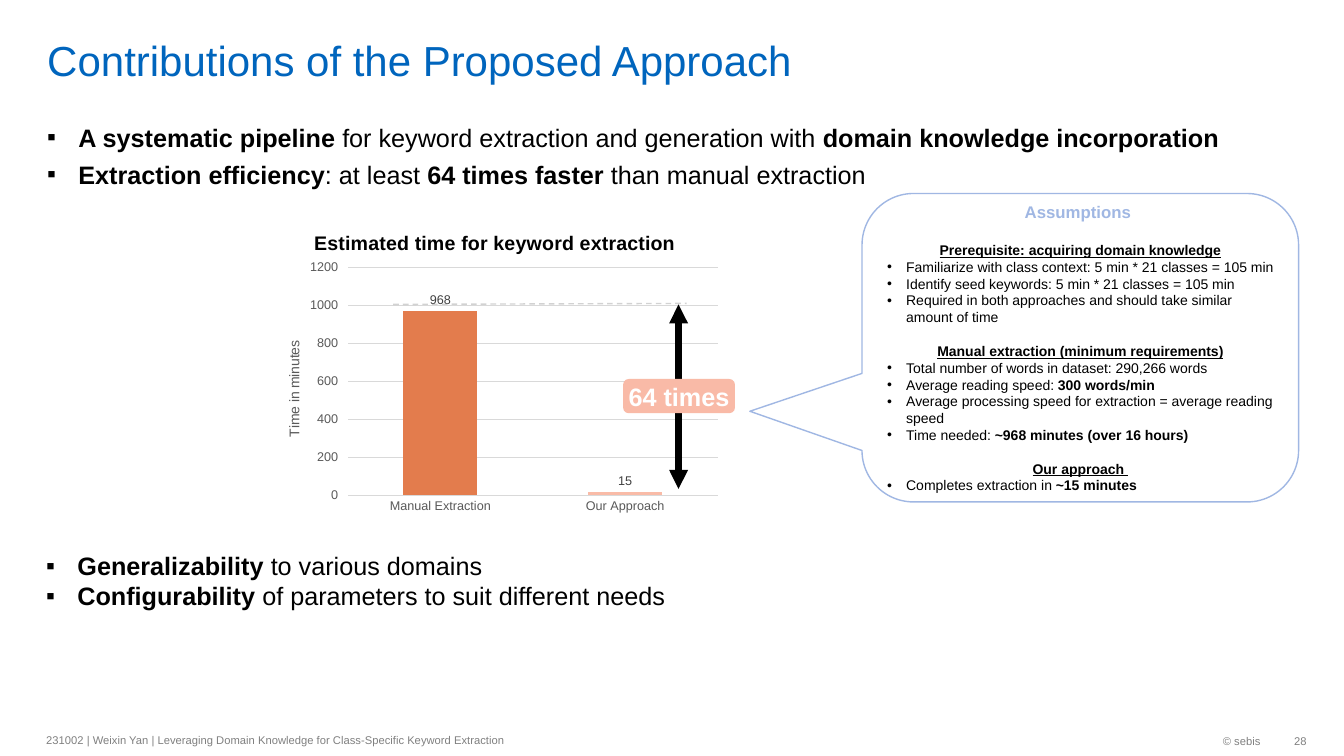
from lxml.etree import SubElement
from pptx import Presentation
from pptx.chart.data import CategoryChartData
from pptx.dml.color import RGBColor
from pptx.enum.chart import XL_CHART_TYPE as ChartKind, XL_LABEL_POSITION as LabelSpot, XL_TICK_MARK as Tick
from pptx.enum.dml import MSO_LINE as Dash
from pptx.enum.shapes import MSO_CONNECTOR as Connector, MSO_SHAPE as Preset
from pptx.enum.text import MSO_ANCHOR as Anchor, PP_ALIGN as Align
from pptx.oxml import parse_xml
from pptx.oxml.ns import nsdecls, qn
from pptx.util import Pt

EMU_PER_PX = 9144


def px(length):
    return length * EMU_PER_PX


def color(value):
    return RGBColor.from_string(value)


class SlideBuilder:
    face = "Arial"
    black = "000000"
    gray = "808080"
    axis_gray = "595959"
    grid_gray = "D9D9D9"
    periwinkle = "A0B7E3"

    def __init__(self, deck):
        self.page = deck.slides.add_slide(deck.slide_layouts[6])

    def style(self, font, size, hue, bold=None):
        font.name, font.size, font.bold = self.face, Pt(size), bold
        font.color.rgb = color(hue)

    def paragraph(self, frame, text, size, hue=black, align=Align.LEFT, bullet=None,
                  indent=0, before=0, underline=None):
        first = not frame.paragraphs[0].runs
        para = frame.paragraphs[0] if first else frame.add_paragraph()
        para.alignment = align
        if not first:
            para.space_before = Pt(before)
        if bullet:
            props = para._p.get_or_add_pPr()
            props.set("marL", str(px(indent)))
            props.set("indent", str(-px(indent)))
            SubElement(props, qn("a:buFont")).set("typeface", self.face)
            SubElement(props, qn("a:buChar")).set("char", bullet)
        self.style(para.font, size, hue)
        para.font.underline = underline
        for index, part in enumerate(text.split("**")):
            if part:
                span = para.add_run()
                span.text = part
                span.font.bold = index % 2 == 1

    def frame(self, shape, anchor, insets):
        frame = shape.text_frame
        frame.word_wrap = True
        frame.vertical_anchor = anchor
        (frame.margin_left, frame.margin_top,
         frame.margin_right, frame.margin_bottom) = map(px, insets)
        return frame

    def text(self, area, lines, size, hue=black, anchor=Anchor.TOP, insets=(10, 5, 10, 5), **layout):
        box = self.page.shapes.add_textbox(*map(px, area))
        frame = self.frame(box, anchor, insets)
        for line in lines:
            self.paragraph(frame, line, size, hue, **layout)

    def shape(self, preset, area, fill=None, line=None, adjustments=(), insets=(10, 5, 10, 5)):
        shape = self.page.shapes.add_shape(preset, *map(px, area))
        shape.shadow.inherit = False
        for index, value in enumerate(adjustments):
            shape.adjustments[index] = value
        if fill:
            shape.fill.solid()
            shape.fill.fore_color.rgb = color(fill)
        else:
            shape.fill.background()
        if line:
            shape.line.color.rgb = color(line)
            shape.line.width = Pt(1)
        else:
            shape.line.fill.background()
        return self.frame(shape, Anchor.MIDDLE, insets)

    def connector(self, start, end, hue, width, arrows=False, dash=None, opacity=None):
        link = self.page.shapes.add_connector(Connector.STRAIGHT, *map(px, start + end))
        link.line.color.rgb = color(hue)
        link.line.width = Pt(width)
        if dash:
            link.line.dash_style = dash
        outline = link.line._get_or_add_ln()
        if opacity:
            SubElement(outline.find(".//" + qn("a:srgbClr")), qn("a:alpha")).set("val", str(opacity * 1000))
        if arrows:
            for end_tag in ("a:headEnd", "a:tailEnd"):
                SubElement(outline, qn(end_tag)).set("type", "triangle")
        SubElement(link._element.spPr, qn("a:effectLst"))

    def place(self, element, index, **fractions):
        for old in element.findall(qn("c:layout")):
            element.remove(old)
        inner = '<c:layoutTarget val="inner"/>' if "w" in fractions else ""
        modes = "".join(f'<c:{key}Mode val="edge"/>' for key in ("x", "y"))
        values = "".join(f'<c:{key} val="{value}"/>' for key, value in fractions.items())
        element.insert(index, parse_xml(
            f'<c:layout {nsdecls("c")}><c:manualLayout>{inner}{modes}{values}</c:manualLayout></c:layout>'))

    def chart_title(self, owner, title, text, size, hue, bold, x, y):
        title.text_frame.text = text
        self.style(title.text_frame.paragraphs[0].font, size, hue, bold)
        self.place(title._element, 1, x=x, y=y)

    def column_chart(self, area, title, axis_title, values, hues):
        data = CategoryChartData()
        data.categories = list(values)
        data.add_series("Series 1", list(values.values()))
        chart = self.page.shapes.add_chart(ChartKind.COLUMN_CLUSTERED, *map(px, area), data).chart
        self.style(chart.font, 10, self.black)
        chart.has_legend = False
        chart.has_title = True
        self.chart_title(chart, chart.chart_title, title, 14, self.black, True, 0.11, 0.05)

        names, scale = chart.category_axis, chart.value_axis
        for axis in (names, scale):
            self.style(axis.tick_labels.font, 9, self.axis_gray)
            axis.minor_tick_mark = Tick.NONE
        names.major_tick_mark = Tick.NONE
        scale.has_title = True
        self.chart_title(scale, scale.axis_title, axis_title, 10, self.axis_gray, False, 0.05, 0.41)
        scale.minimum_scale, scale.maximum_scale, scale.major_unit = 0, 1200, 200
        scale.format.line.fill.background()
        for line in (names.format.line, scale.major_gridlines.format.line):
            line.color.rgb = color(self.grid_gray)
            line.width = Pt(0.75)

        plot = chart.plots[0]
        plot.gap_width = 150
        plot.vary_by_categories = False
        series = plot.series[0]
        for index, hue in enumerate(hues):
            fill = series.points[index].format.fill
            fill.solid()
            fill.fore_color.rgb = color(hue)
        labels = series.data_labels
        labels.show_value = True
        labels.position = LabelSpot.OUTSIDE_END
        self.style(labels.font, 9, "404040")
        self.place(chart._chartSpace.chart.plotArea, 0, x=0.19, y=0.18, w=0.79, h=0.74)


ASSUMPTIONS = {
    "Prerequisite: acquiring domain knowledge": [
        "Familiarize with class context: 5 min * 21 classes = 105 min",
        "Identify seed keywords: 5 min * 21 classes = 105 min",
        "Required in both approaches and should take similar amount of time",
    ],
    "Manual extraction (minimum requirements)": [
        "Total number of words in dataset: 290,266 words",
        "Average reading speed: **300 words/min**",
        "Average processing speed for extraction = average reading speed",
        "Time needed: **~968 minutes (over 16 hours)**",
    ],
    "Our approach ": ["Completes extraction in** ~15 minutes**"],
}


def main():
    deck = Presentation()
    deck.slide_width, deck.slide_height = px(1333), px(750)
    slide = SlideBuilder(deck)

    slide.text((37, 5, 1158, 79), ["Contributions of the Proposed Approach"], 30, "0065BD",
               Anchor.BOTTOM, (10, 0, 10, 0))
    slide.text((37, 116, 1276, 64), [
        "**A systematic pipeline **for keyword extraction and generation with** domain knowledge incorporation**",
        "**Extraction efficiency**: at least **64 times faster **than manual extraction",
    ], 18, bullet="▪", indent=31, before=5)
    slide.text((36, 541, 1182, 71), [
        "**Generalizability** to various domains",
        "**Configurability** of parameters to suit different needs",
    ], 18, bullet="▪", indent=31)

    callout = slide.shape(Preset.ROUNDED_RECTANGULAR_CALLOUT, (855, 192, 433, 306),
                          line=slide.periwinkle, adjustments=(-0.757, 0.206, 0.167))
    slide.paragraph(callout, "**Assumptions **", 12, slide.periwinkle, Align.CENTER)
    for index, (heading, facts) in enumerate(ASSUMPTIONS.items()):
        slide.paragraph(callout, f"**{heading}**", 10, align=Align.CENTER,
                        before=12 if index else 14, underline=True)
        for fact in facts:
            slide.paragraph(callout, fact, 10, bullet="•", indent=19)

    slide.column_chart((257, 210, 464, 306), "Estimated time for keyword extraction", "Time in minutes",
                       {"Manual Extraction": 968, "Our Approach": 15}, ["E37C4D", "F9BBA7"])
    slide.connector((673, 302), (673, 485), slide.black, 4.5, arrows=True)
    badge = slide.shape(Preset.ROUNDED_RECTANGLE, (618, 376, 111, 34), fill="F9BAA7", insets=(0, 0, 0, 0))
    slide.paragraph(badge, "**64 times**", 18, "FFFFFF", Align.CENTER)
    slide.connector((390, 302), (681, 301), "A6A6A6", 1, dash=Dash.DASH, opacity=50)

    slide.text((36, 718, 630, 32),
               ["231002 | Weixin Yan | Leveraging Domain Knowledge for Class-Specific Keyword Extraction"],
               8, slide.gray, Anchor.MIDDLE)
    slide.text((1026, 719, 234, 32), ["© sebis"], 8, slide.gray, Anchor.MIDDLE, align=Align.RIGHT)
    slide.text((1260, 719, 36, 32), ["28"], 8, slide.gray, Anchor.MIDDLE, (10, 5, 0, 5), align=Align.RIGHT)
    deck.save("out.pptx")


if __name__ == "__main__":
    main()
